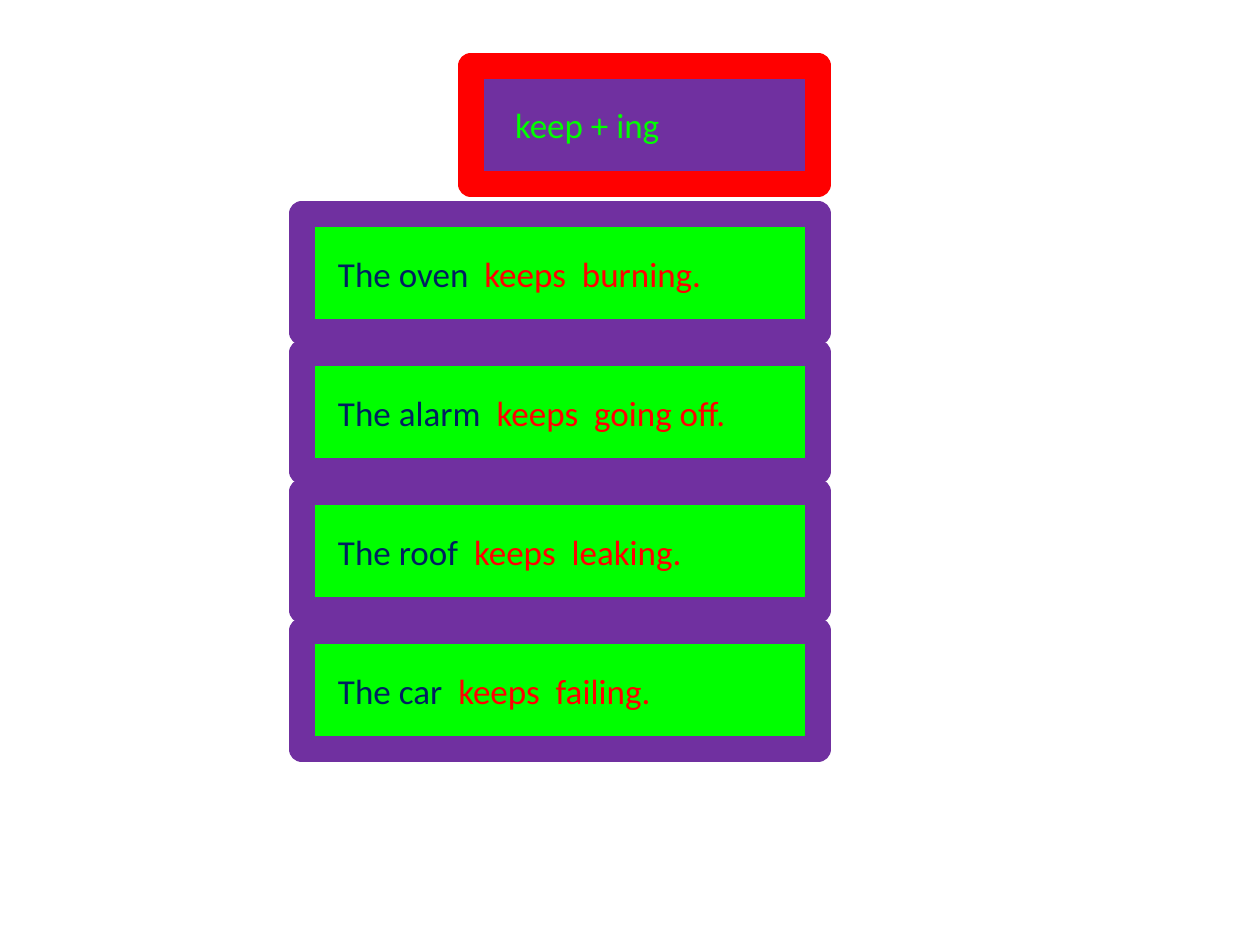
from pptx import Presentation
from pptx.dml.color import RGBColor
from pptx.enum.shapes import MSO_SHAPE as Shape
from pptx.enum.text import MSO_ANCHOR as Anchor, PP_ALIGN as Align
from pptx.util import Emu, Inches, Pt

PX = Inches(1) / 126
RIGHT, HEIGHT = 818, 118
FIRST_ROW, ROW_STEP = 214, 139
PURPLE, GREEN, RED, NAVY = "7030A0", "00FF00", "FF0000", "002060"
SENTENCES = [
    ("The oven  ", "keeps  burning."),
    ("The alarm  ", "keeps  going off."),
    ("The roof  ", "keeps  leaking."),
    ("The car  ", "keeps  failing."),
]


def px(length):
    """Turn pixels into EMU."""
    return Emu(round(length * PX))


def color(value):
    """Turn a hex string into a colour."""
    return RGBColor.from_string(value)


def add_card(page, left, top, inset, fill, border, spans):
    """Add a thickly bordered box with coloured spans of text."""
    box = page.shapes.add_shape(
        Shape.RECTANGLE, px(left), px(top), px(RIGHT - left), px(HEIGHT))
    box.shadow.inherit = False
    box.fill.solid()
    box.fill.fore_color.rgb = color(fill)
    box.line.color.rgb = color(border)
    box.line.width = Pt(15.25)
    frame = box.text_frame
    frame.word_wrap = True
    frame.vertical_anchor = Anchor.MIDDLE
    frame.margin_left = px(inset)
    para = frame.paragraphs[0]
    para.alignment = Align.LEFT
    for text, ink in spans:
        span = para.add_run()
        span.text = text
        span.font.name = "Calibri"
        span.font.size = Pt(20)
        span.font.color.rgb = color(ink)


def main():
    """Build the slide and save it."""
    deck = Presentation()
    deck.slide_width, deck.slide_height = Inches(10), Inches(7.5)
    page = deck.slides.add_slide(deck.slide_layouts[6])
    add_card(page, 471, 66, 44, PURPLE, RED, [("keep + ing", GREEN)])
    for row, (subject, action) in enumerate(SENTENCES):
        add_card(page, 302, FIRST_ROW + row * ROW_STEP, 36, GREEN, PURPLE,
                 [(subject, NAVY), (action, RED)])
    deck.save("out.pptx")


if __name__ == "__main__":
    main()
